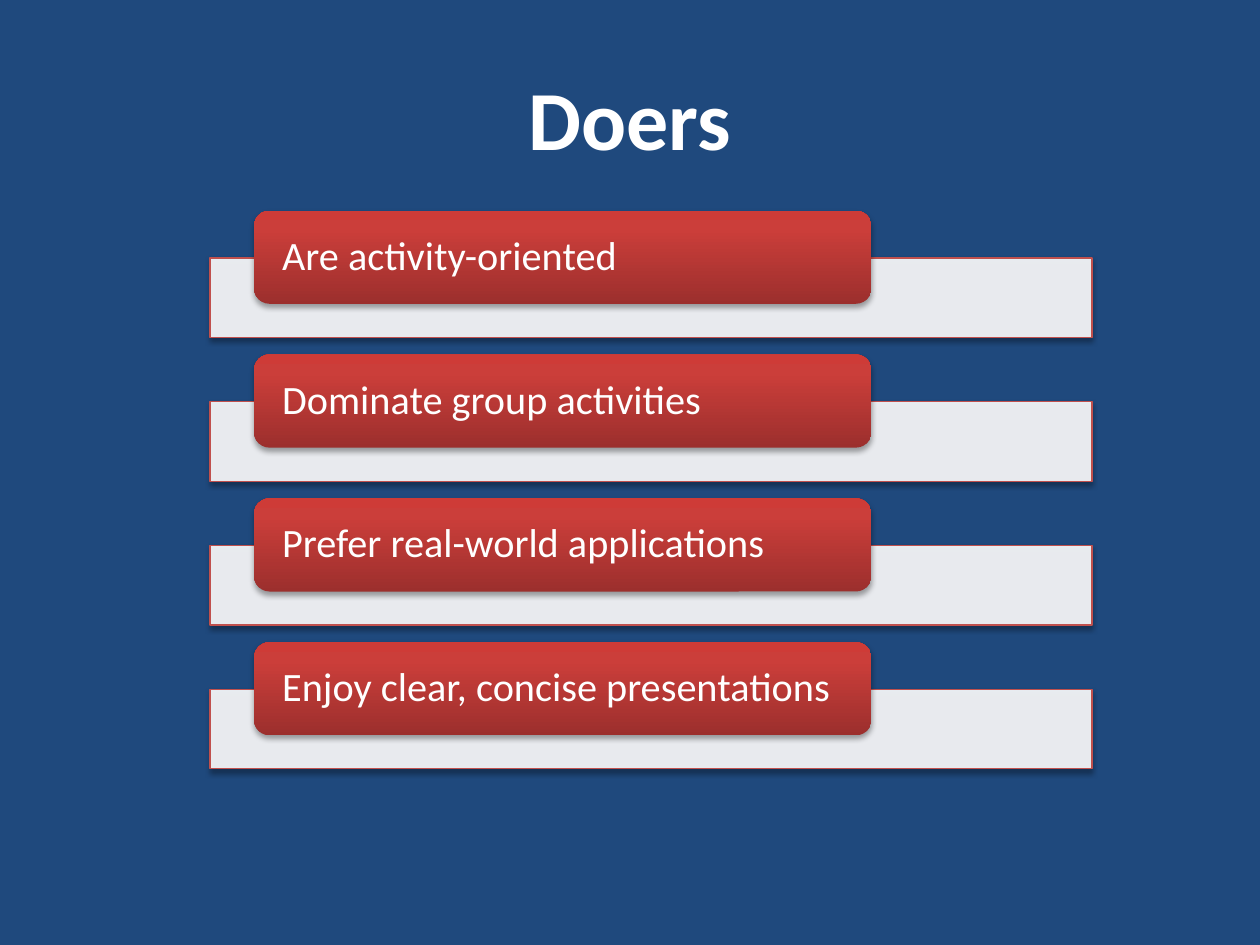
from lxml.etree import SubElement
from pptx import Presentation
from pptx.dml.color import RGBColor
from pptx.enum.shapes import MSO_SHAPE as Shape
from pptx.enum.text import MSO_ANCHOR as Anchor, PP_ALIGN as Align
from pptx.oxml.ns import qn
from pptx.util import Pt

COLORS = {"background": "1F497D", "white": "FFFFFF", "outline": "C0504D", "shadow": "000000"}
TAB_STOPS = [(0, "9C2F2D"), (80, "CB3E3A"), (100, "CE3B37")]
TRAITS = [
    "Are activity-oriented",
    "Dominate group activities",
    "Prefer real-world applications",
    "Enjoy clear, concise presentations",
]


def color(name):
    """Return the named palette colour."""
    return RGBColor.from_string(COLORS[name])


def set_values(target, values):
    """Set each attribute of the target from a dict."""
    for name, value in values.items():
        setattr(target, name, value)


def add_alpha(color_element, percent):
    """Give a colour element an opacity in percent."""
    SubElement(color_element, qn("a:alpha"), val=str(percent * 1000))


def add_shadow(shape):
    """Give the shape a soft shadow straight below it."""
    shape.shadow.inherit = False
    effects = shape._element.spPr.find(qn("a:effectLst"))
    shadow = SubElement(effects, qn("a:outerShdw"), blurRad=str(Pt(3.1)), dist=str(Pt(1.8)),
                        dir="5400000", rotWithShape="0")
    add_alpha(SubElement(shadow, qn("a:srgbClr"), val=COLORS["shadow"]), 35)


def fill_gradient(shape):
    """Fill the shape with the red gradient, dark at the bottom."""
    shape.fill.gradient()
    shape.fill.gradient_angle = 90
    stops = shape._element.spPr.find(".//" + qn("a:gsLst"))
    stops.clear()
    for position, value in TAB_STOPS:
        stop = SubElement(stops, qn("a:gs"), pos=str(position * 1000))
        SubElement(stop, qn("a:srgbClr"), val=value)


def write_text(shape, text, frame_format, paragraph_format, font_format):
    """Write one formatted white paragraph into the shape."""
    frame = shape.text_frame
    set_values(frame, {"word_wrap": True, "vertical_anchor": Anchor.MIDDLE, **frame_format})
    paragraph = frame.paragraphs[0]
    set_values(paragraph, paragraph_format)
    run = paragraph.add_run()
    run.text = text
    set_values(run.font, {"name": "Calibri", **font_format})
    run.font.color.rgb = color("white")


def add_title(slide, text, left, top, width, height):
    """Place the centred title in its box."""
    box = slide.shapes.add_textbox(Pt(left), Pt(top), Pt(width), Pt(height))
    write_text(box, text, {}, {"alignment": Align.CENTER}, {"size": Pt(48), "bold": True})


def add_trait(slide, text, left, top, width):
    """Place one pale bar with a red tab overlapping its top edge."""
    bar = slide.shapes.add_shape(Shape.RECTANGLE, Pt(left), Pt(top + 27), Pt(width), Pt(45.4))
    bar.fill.solid()
    bar.fill.fore_color.rgb = color("white")
    add_alpha(bar._element.spPr.find(qn("a:solidFill"))[0], 90)
    bar.line.color.rgb = color("outline")
    bar.line.width = Pt(0.75)
    add_shadow(bar)

    tab = slide.shapes.add_shape(Shape.ROUNDED_RECTANGLE, Pt(left + width * 0.05), Pt(top),
                                 Pt(width * 0.7), Pt(53.2))
    fill_gradient(tab)
    tab.line.fill.background()
    add_shadow(tab)
    margins = {"margin_left": Pt(13.5), "margin_right": Pt(13.5), "margin_top": 0, "margin_bottom": 0}
    write_text(tab, text, margins, {"alignment": Align.LEFT, "line_spacing": 0.9}, {"size": Pt(23)})


def add_traits(slide, traits, left, top, width, pitch):
    """Stack the traits at an equal pitch."""
    for index, trait in enumerate(traits):
        add_trait(slide, trait, left, top + index * pitch, width)


def main():
    """Build and save the slide."""
    presentation = Presentation()
    set_values(presentation, {"slide_width": Pt(720), "slide_height": Pt(540)})
    slide = presentation.slides.add_slide(presentation.slide_layouts[6])
    slide.background.fill.solid()
    slide.background.fill.fore_color.rgb = color("background")
    add_traits(slide, TRAITS, 120, 120.4, 504, 82.2)
    add_title(slide, "Doers", 36, 21.6, 648, 90)
    presentation.save("out.pptx")


if __name__ == "__main__":
    main()
